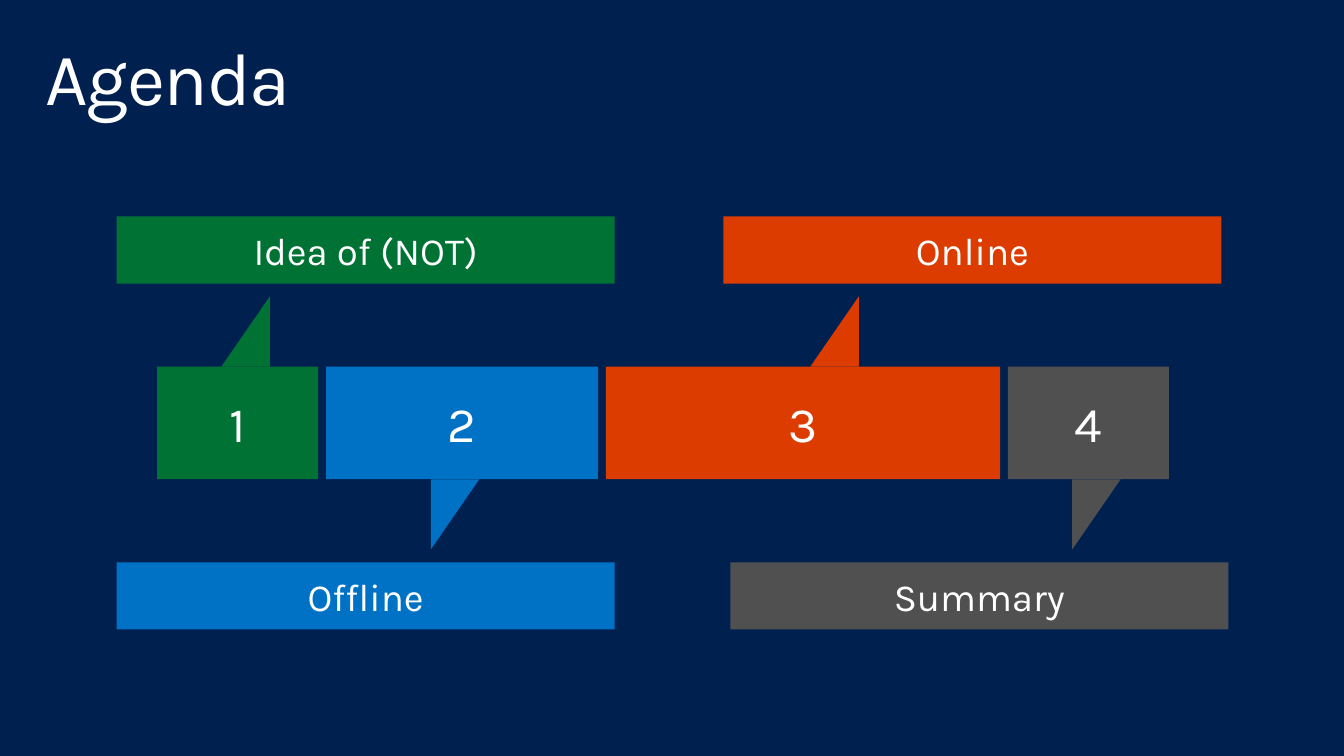
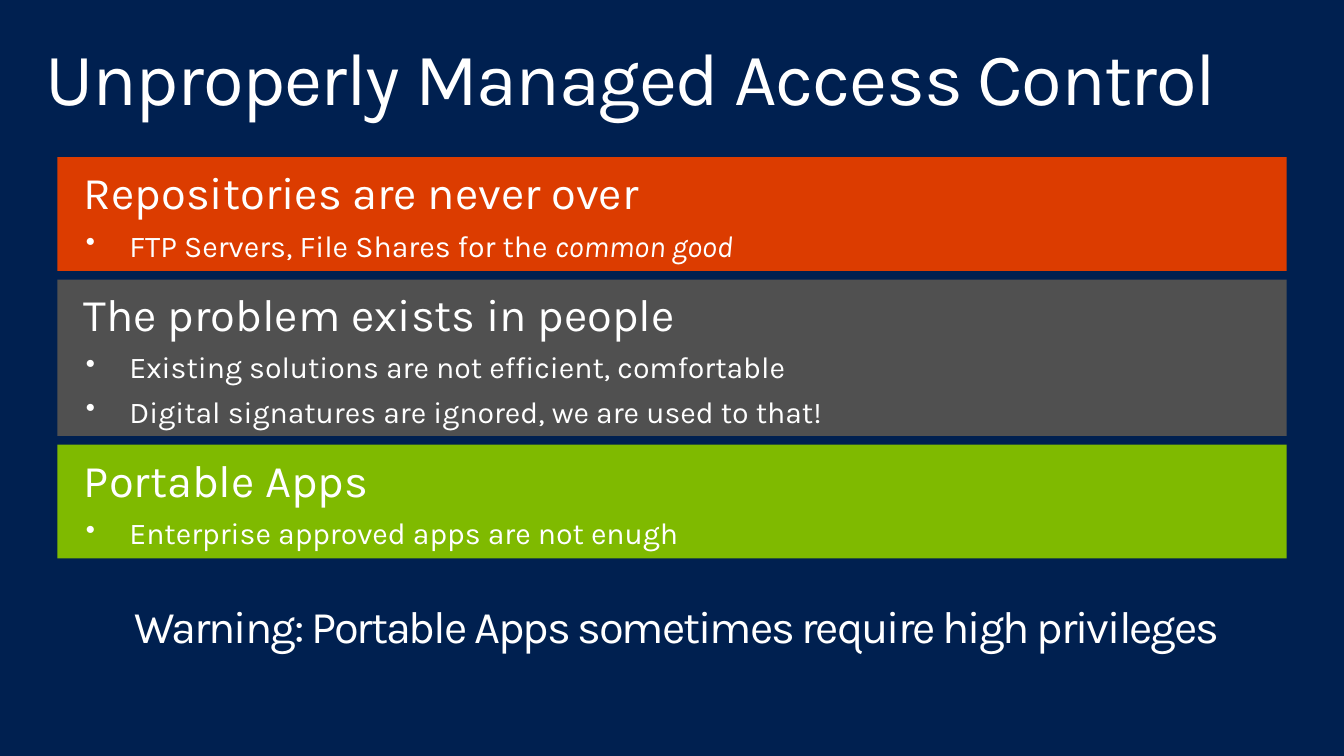
from lxml import etree
from pptx import Presentation
from pptx.dml.color import RGBColor
from pptx.enum import shapes, text
from pptx.oxml import ns
from pptx.util import Inches, Pt

WIDTH, HEIGHT = 13.6, 7.65
FONT = "Karla"
NAVY, WHITE = "002050", "FFFFFF"
GREEN, BLUE, ORANGE, GRAY, LIME = "007233", "0072C6", "DC3C00", "505050", "7FBA00"

# label, colour, block width, label left, pointer left, label sits above
AGENDA = [
    ("Idea of (NOT)", GREEN, 1.63, 1.18, 2.24, True),
    ("Offline", BLUE, 2.75, 1.18, 4.36, False),
    ("Online", ORANGE, 3.99, 7.32, 8.2, True),
    ("Summary", GRAY, 1.63, 7.39, 10.85, False),
]
BLOCK_LEFT, BLOCK_TOP, BLOCK_HEIGHT, BLOCK_GAP = 1.59, 3.71, 1.14, 0.08
LABEL_WIDTH, LABEL_HEIGHT, LABEL_GAP = 5.04, 0.68, 0.13
POINTER_WIDTH, POINTER_HEIGHT = 0.49, 0.71

# heading, colour, bullets as lists of (words, italic)
PROBLEMS = [
    ("Repositories are never over", ORANGE,
     [[("FTP Servers, File Shares for the ", False), ("common good", True)]]),
    ("The problem exists in people", GRAY,
     [[("Existing solutions are not efficient, comfortable", False)],
      [("Digital signatures are ignored, we are used to that!", False)]]),
    ("Portable Apps", LIME,
     [[("Enterprise approved apps are not enugh", False)]]),
]
WARNING = "Warning: Portable Apps sometimes require high privileges"
BAND_LEFT, BAND_TOP, BAND_WIDTH, BAND_GAP = 0.58, 1.59, 12.44, 0.09
BAND_BASE, BULLET_ROW = 0.72, 0.43


def paint(fill, color):
    fill.solid()
    fill.fore_color.rgb = RGBColor.from_string(color)


def add_span(para, words, size, italic=None, tracking=None):
    span = para.add_run()
    span.text = words
    span.font.name, span.font.size, span.font.italic = FONT, Pt(size), italic
    span.font.color.rgb = RGBColor.from_string(WHITE)
    if tracking is not None:
        span._r.get_or_add_rPr().set("spc", str(int(tracking * 100)))


def set_frame(frame, insets, anchor):
    frame.word_wrap = True
    frame.auto_size = text.MSO_AUTO_SIZE.NONE
    frame.vertical_anchor = anchor
    (frame.margin_left, frame.margin_top,
     frame.margin_right, frame.margin_bottom) = map(Inches, insets)


def add_block(page, kind, place, color):
    block = page.shapes.add_shape(kind, *map(Inches, place))
    block.shadow.inherit = False
    paint(block.fill, color)
    block.line.fill.background()
    set_frame(block.text_frame, (0.1, 0.05, 0.1, 0.05), text.MSO_ANCHOR.MIDDLE)
    return block


def add_caption(page, place, color, words, size):
    block = add_block(page, shapes.MSO_SHAPE.RECTANGLE, place, color)
    para = block.text_frame.paragraphs[0]
    para.alignment = text.PP_ALIGN.CENTER
    add_span(para, words, size)


def add_bullet(para):
    props = para._p.get_or_add_pPr()
    props.set("marL", str(Inches(0.46)))
    props.set("indent", str(Inches(-0.44)))
    etree.SubElement(props, ns.qn("a:buSzPct"), val="90000")
    etree.SubElement(props, ns.qn("a:buChar"), char="•")


def add_page(deck, title):
    page = deck.slides.add_slide(deck.slide_layouts.get_by_name("Title Only"))
    frame = page.shapes.title.text_frame
    set_frame(frame, (0.16, 0.1, 0.16, 0.1), text.MSO_ANCHOR.TOP)
    para = frame.paragraphs[0]
    para.alignment = text.PP_ALIGN.LEFT
    para.line_spacing = 0.9
    add_span(para, title, 54, tracking=-1)
    return page


def start_deck():
    """Set the slide size and the background and title place all slides share."""
    deck = Presentation()
    deck.slide_width, deck.slide_height = Inches(WIDTH), Inches(HEIGHT)
    paint(deck.slide_master.background.fill, NAVY)
    title = deck.slide_layouts.get_by_name("Title Only").placeholders[0]
    title.left, title.top, title.width, title.height = map(Inches, (0.3, 0.32, 13, 1))
    return deck


def build_agenda(deck):
    page = add_page(deck, "Agenda")
    left = BLOCK_LEFT
    bottom = BLOCK_TOP + BLOCK_HEIGHT
    reach = POINTER_HEIGHT + LABEL_GAP
    for number, (label, color, width, label_left, tip_left, above) in enumerate(AGENDA, 1):
        label_top = BLOCK_TOP - reach - LABEL_HEIGHT if above else bottom + reach
        add_caption(page, (label_left, label_top, LABEL_WIDTH, LABEL_HEIGHT), color, label, 28)
        add_caption(page, (left, BLOCK_TOP, width, BLOCK_HEIGHT), color, str(number), 36)
        tip_top = BLOCK_TOP - POINTER_HEIGHT if above else bottom
        pointer = add_block(page, shapes.MSO_SHAPE.RIGHT_TRIANGLE,
                            (tip_left, tip_top, POINTER_WIDTH, POINTER_HEIGHT), color)
        pointer._element.spPr.xfrm.set("flipH" if above else "flipV", "1")
        left += width + BLOCK_GAP


def build_problems(deck):
    page = add_page(deck, "Unproperly Managed Access Control")
    top = BAND_TOP
    for heading, color, bullets in PROBLEMS:
        height = BAND_BASE + BULLET_ROW * len(bullets)
        band = add_block(page, shapes.MSO_SHAPE.RECTANGLE,
                         (BAND_LEFT, top, BAND_WIDTH, height), color)
        frame = band.text_frame
        frame.margin_left = Inches(0.27)
        frame.paragraphs[0].alignment = text.PP_ALIGN.LEFT
        add_span(frame.paragraphs[0], heading, 33)
        for spans in bullets:
            para = frame.add_paragraph()
            para.level = 1
            para.alignment = text.PP_ALIGN.LEFT
            para.space_before = Pt(6.1)
            add_bullet(para)
            for words, italic in spans:
                add_span(para, words, 22, italic)
        top += height + BAND_GAP

    box = page.shapes.add_textbox(*map(Inches, (0.65, 6, 12.3, 0.65)))
    set_frame(box.text_frame, (0.2, 0.05, 0.1, 0.05), text.MSO_ANCHOR.TOP)
    para = box.text_frame.paragraphs[0]
    para.alignment = text.PP_ALIGN.CENTER
    add_span(para, WARNING, 33, tracking=-1.5)


def main():
    deck = start_deck()
    build_agenda(deck)
    build_problems(deck)
    deck.save("out.pptx")


if __name__ == "__main__":
    main()
